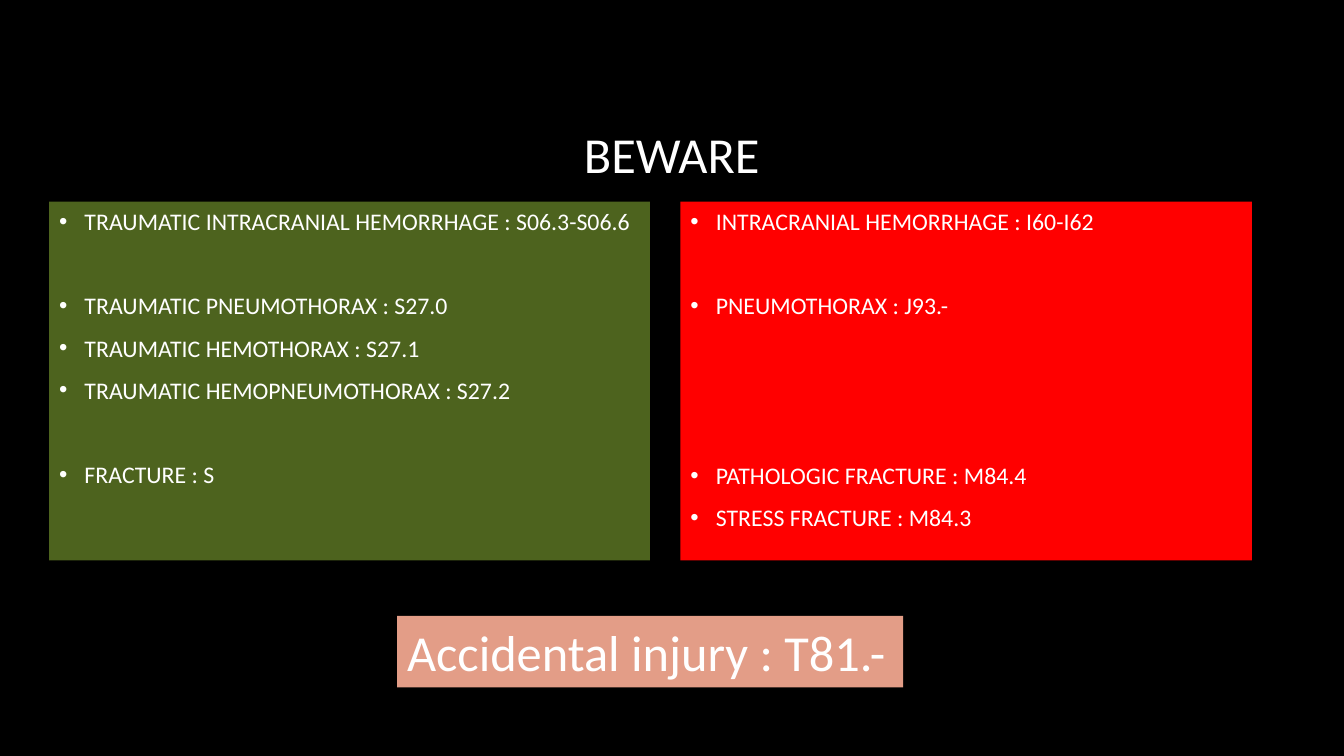
"""Build the BEWARE slide contrasting traumatic and non-traumatic diagnosis codes."""
from dataclasses import dataclass

from lxml import etree
from pptx import Presentation, util as u
from pptx.dml.color import RGBColor
from pptx.enum import shapes, text
from pptx.oxml.ns import qn

COLOURS = {
    "background": "000000",
    "text": "FFFFFF",
    "traumatic": "4D631E",
    "other": "FF0000",
    "accidental": "E39D87",
}
LINE_PT = 20.75
ROW_PT = 30.4
INDENT = u.Cm(0.64)


@dataclass(frozen=True)
class Entry:
    """A line of text and its row in the panel."""
    wording: str
    row: int = 0


@dataclass(frozen=True)
class Panel:
    """A filled box, with its place in centimetres."""
    colour: str
    place: tuple[float, float, float, float]
    entries: tuple[Entry, ...]
    size: float = 17
    bulleted: bool = True
    anchor: text.MSO_ANCHOR = text.MSO_ANCHOR.TOP


PANELS = (
    Panel("traumatic", (1.24, 5.08, 15.14, 9.04), (
        Entry("TRAUMATIC INTRACRANIAL HEMORRHAGE : S06.3-S06.6"),
        Entry("TRAUMATIC PNEUMOTHORAX : S27.0", 2),
        Entry("TRAUMATIC HEMOTHORAX : S27.1", 3),
        Entry("TRAUMATIC HEMOPNEUMOTHORAX : S27.2", 4),
        Entry("FRACTURE : S", 6),
    )),
    Panel("other", (17.15, 5.08, 14.4, 9.04), (
        Entry("INTRACRANIAL HEMORRHAGE : I60-I62"),
        Entry("PNEUMOTHORAX : J93.-", 2),
        Entry("PATHOLOGIC FRACTURE : M84.4", 6),
        Entry("STRESS FRACTURE : M84.3", 7),
    )),
    Panel("accidental", (10.01, 15.52, 12.75, 1.8),
          (Entry("Accidental injury : T81.-"),), 36, False, text.MSO_ANCHOR.MIDDLE),
)


def apply(target: object, values: dict[str, object]) -> None:
    """Set each named attribute on the target."""
    for name, value in values.items():
        setattr(target, name, value)


def rgb(name: str) -> RGBColor:
    """Look up a named colour."""
    return RGBColor.from_string(COLOURS[name])


def place_values(place: tuple[float, float, float, float]) -> dict[str, object]:
    """Turn a place in centimetres into position attributes."""
    return dict(zip(("left", "top", "width", "height"), map(u.Cm, place)))


def write(paragraph, wording: str, size: float) -> None:
    """Add a run in the slide's font and text colour."""
    run = paragraph.add_run()
    run.text = wording
    apply(run.font, {"name": "Calibri", "size": u.Pt(size)})
    run.font.color.rgb = rgb("text")


def add_bullet(paragraph) -> None:
    """Give the paragraph a hanging round bullet."""
    properties = paragraph._p.get_or_add_pPr()
    properties.set("marL", str(INDENT))
    properties.set("indent", str(-INDENT))
    colour = etree.SubElement(properties, qn("a:buClr"))
    etree.SubElement(colour, qn("a:srgbClr"), val=COLOURS["text"])
    etree.SubElement(properties, qn("a:buFont"), typeface="Arial")
    etree.SubElement(properties, qn("a:buChar"), char="•")


def draw_panel(slide, panel: Panel) -> None:
    """Draw a filled box with its entries on their rows."""
    box = slide.shapes.add_shape(shapes.MSO_SHAPE.RECTANGLE, *map(u.Cm, panel.place))
    box.shadow.inherit = False
    box.fill.solid()
    box.fill.fore_color.rgb = rgb(panel.colour)
    box.line.fill.background()
    frame = box.text_frame
    apply(frame, {"word_wrap": True, "vertical_anchor": panel.anchor})
    previous_row = 0
    for index, entry in enumerate(panel.entries):
        paragraph = frame.add_paragraph() if index else frame.paragraphs[0]
        if panel.bulleted:
            add_bullet(paragraph)
        paragraph.alignment = text.PP_ALIGN.LEFT
        if index:
            gap = (entry.row - previous_row) * ROW_PT - LINE_PT
            paragraph.space_before = u.Pt(gap)
        write(paragraph, entry.wording, panel.size)
        previous_row = entry.row


def draw_title(slide) -> None:
    """Place and format the slide title."""
    heading = slide.shapes.title
    apply(heading, place_values((2.54, 1.73, 28.78, 4.45)))
    apply(heading.text_frame, {
        "word_wrap": True,
        "auto_size": text.MSO_AUTO_SIZE.NONE,
        "vertical_anchor": text.MSO_ANCHOR.MIDDLE,
    })
    paragraph = heading.text_frame.paragraphs[0]
    apply(paragraph, {"alignment": text.PP_ALIGN.CENTER, "line_spacing": 0.9})
    write(paragraph, "BEWARE", 36)


def main() -> None:
    """Build and save the presentation."""
    deck = Presentation()
    apply(deck, {"slide_width": u.Cm(33.87), "slide_height": u.Cm(19.05)})
    slide = deck.slides.add_slide(deck.slide_layouts[5])
    slide.background.fill.solid()
    slide.background.fill.fore_color.rgb = rgb("background")
    draw_title(slide)
    for panel in PANELS:
        draw_panel(slide, panel)
    deck.save("out.pptx")


if __name__ == "__main__":
    main()
